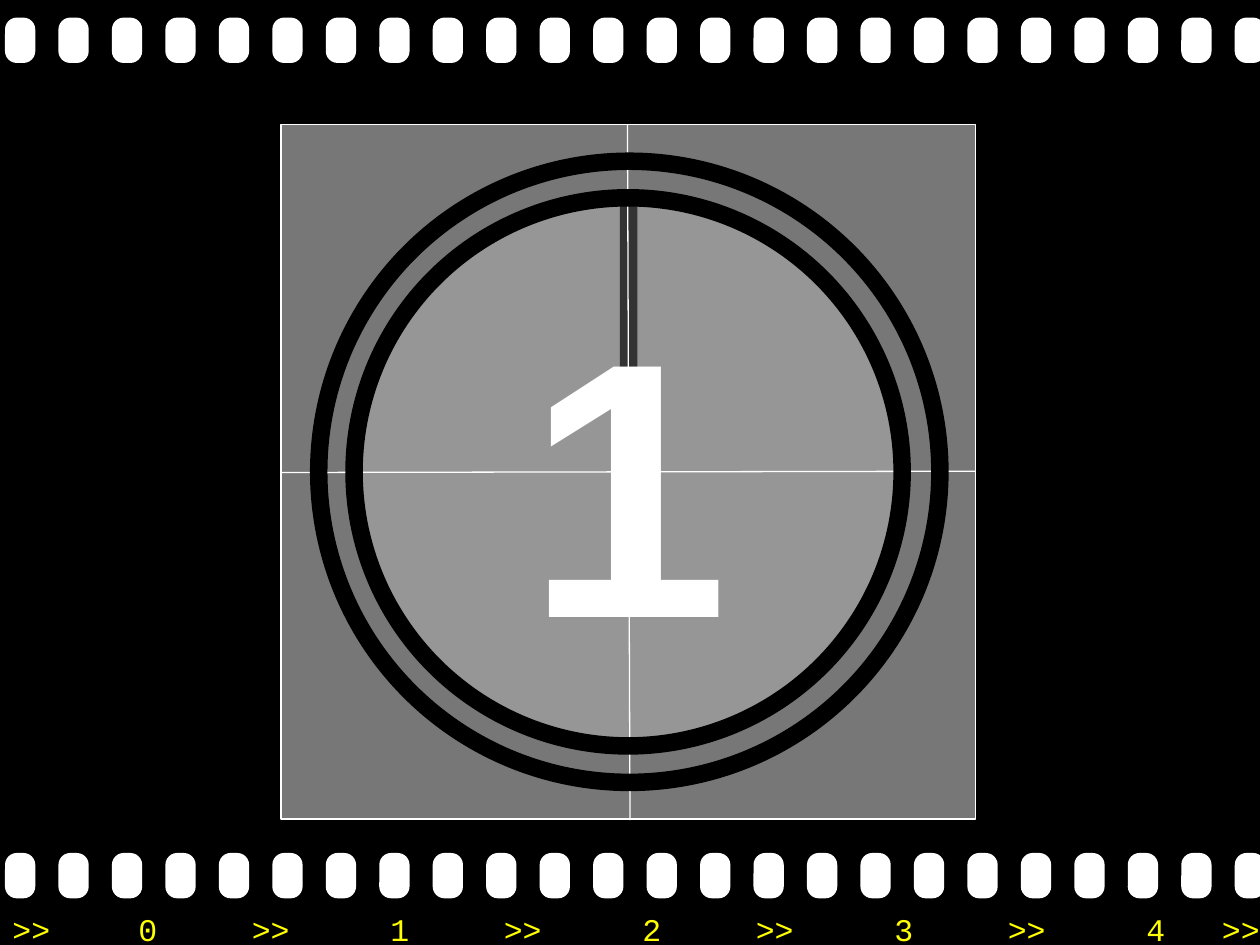
from lxml import etree
from pptx import Presentation
from pptx.dml.color import RGBColor
from pptx.enum.shapes import MSO_CONNECTOR as Connector, MSO_SHAPE as Preset
from pptx.enum.text import MSO_ANCHOR as Anchor, PP_ALIGN as Align
from pptx.oxml.ns import qn
from pptx.util import Inches, Pt

BLACK, WHITE, YELLOW = "000000", "FFFFFF", "FFFF00"
HOLE_COUNT = 24
HOLE_PITCH = 9.76 / (HOLE_COUNT - 1)


def color(hex_code):
    return RGBColor.from_string(hex_code)


def add_preset(shapes, preset, box, fill=None, line=None, line_width=0.75):
    shape = shapes.add_shape(preset, *map(Inches, box))
    shape.shadow.inherit = False
    if fill:
        shape.fill.solid()
        shape.fill.fore_color.rgb = color(fill)
    else:
        shape.fill.background()
    if line:
        shape.line.color.rgb = color(line)
        shape.line.width = Pt(line_width)
    else:
        shape.line.fill.background()
    return shape


def add_crosshair_line(shapes, start, end):
    line = shapes.add_connector(Connector.STRAIGHT, *map(Inches, start + end))
    line.line.color.rgb = color(WHITE)
    line.line.width = Pt(0.75)
    etree.SubElement(line._element.spPr, qn("a:effectLst"))


def style_font(paragraph, name, size, hex_code, bold=False):
    font = paragraph.font
    font.name, font.size, font.bold = name, Pt(size), bold
    font.color.rgb = color(hex_code)


def add_perforations(shapes, top):
    strip = shapes.add_group_shape()
    for index in range(HOLE_COUNT):
        box = (0.04 + index * HOLE_PITCH, top, 0.24, 0.36)
        hole = add_preset(strip.shapes, Preset.ROUNDED_RECTANGLE, box, WHITE)
        hole.adjustments[0] = 0.39


def set_tab_stops(paragraph, stops):
    tab_list = etree.Element(qn("a:tabLst"))
    for stop in stops:
        etree.SubElement(tab_list, qn("a:tab"), pos=str(Inches(stop)), algn="l")
    paragraph._p.get_or_add_pPr().insert(0, tab_list)


def add_frame_numbers(shapes):
    """Edge print: frame numbers two inches apart with arrows between them."""
    box = shapes.add_textbox(*map(Inches, (0, 7.17, 10.2, 0.4)))
    box.text_frame.word_wrap = True
    edge_print = box.text_frame.paragraphs[0]
    edge_print.text = ">>" + "".join(f"\t{number}\t>>" for number in range(5))
    style_font(edge_print, "Courier New", 18, YELLOW)
    set_tab_stops(edge_print, (1, 1.9, 3, 3.9, 5, 5.9, 7, 7.9, 9, 9.6))


def add_sweep(shapes):
    sweep = shapes.add_group_shape()
    add_preset(sweep.shapes, Preset.OVAL, (2.83, 1.57, 4.32, 4.35), "969696", WHITE)
    add_preset(sweep.shapes, Preset.RECTANGLE, (4.92, 1.58, 0.14, 2.16), "333333")


def add_countdown_number(ring, number):
    frame = ring.text_frame
    frame.word_wrap = False
    frame.vertical_anchor = Anchor.MIDDLE
    digit = frame.paragraphs[0]
    digit.text = number
    digit.alignment = Align.CENTER
    style_font(digit, "Arial", 208, WHITE, bold=True)


def main():
    deck = Presentation()
    deck.slide_width, deck.slide_height = Inches(10), Inches(7.5)
    slide = deck.slides.add_slide(deck.slide_layouts[6])
    slide.background.fill.solid()
    slide.background.fill.fore_color.rgb = color(BLACK)
    shapes = slide.shapes

    for top in (6.77, 0.14):
        add_perforations(shapes, top)
    add_frame_numbers(shapes)

    add_preset(shapes, Preset.RECTANGLE, (2.23, 0.99, 5.51, 5.51), "777777", WHITE)
    add_sweep(shapes)
    add_crosshair_line(shapes, (4.98, 0.99), (5, 6.51))
    add_crosshair_line(shapes, (7.74, 3.74), (2.23, 3.75))

    inner_ring = add_preset(shapes, Preset.OVAL, (2.81, 1.57, 4.35, 4.35),
                            line=BLACK, line_width=10)
    add_countdown_number(inner_ring, "1")
    add_preset(shapes, Preset.OVAL, (2.53, 1.28, 4.93, 4.93),
               line=BLACK, line_width=10)

    deck.save("out.pptx")


if __name__ == "__main__":
    main()
